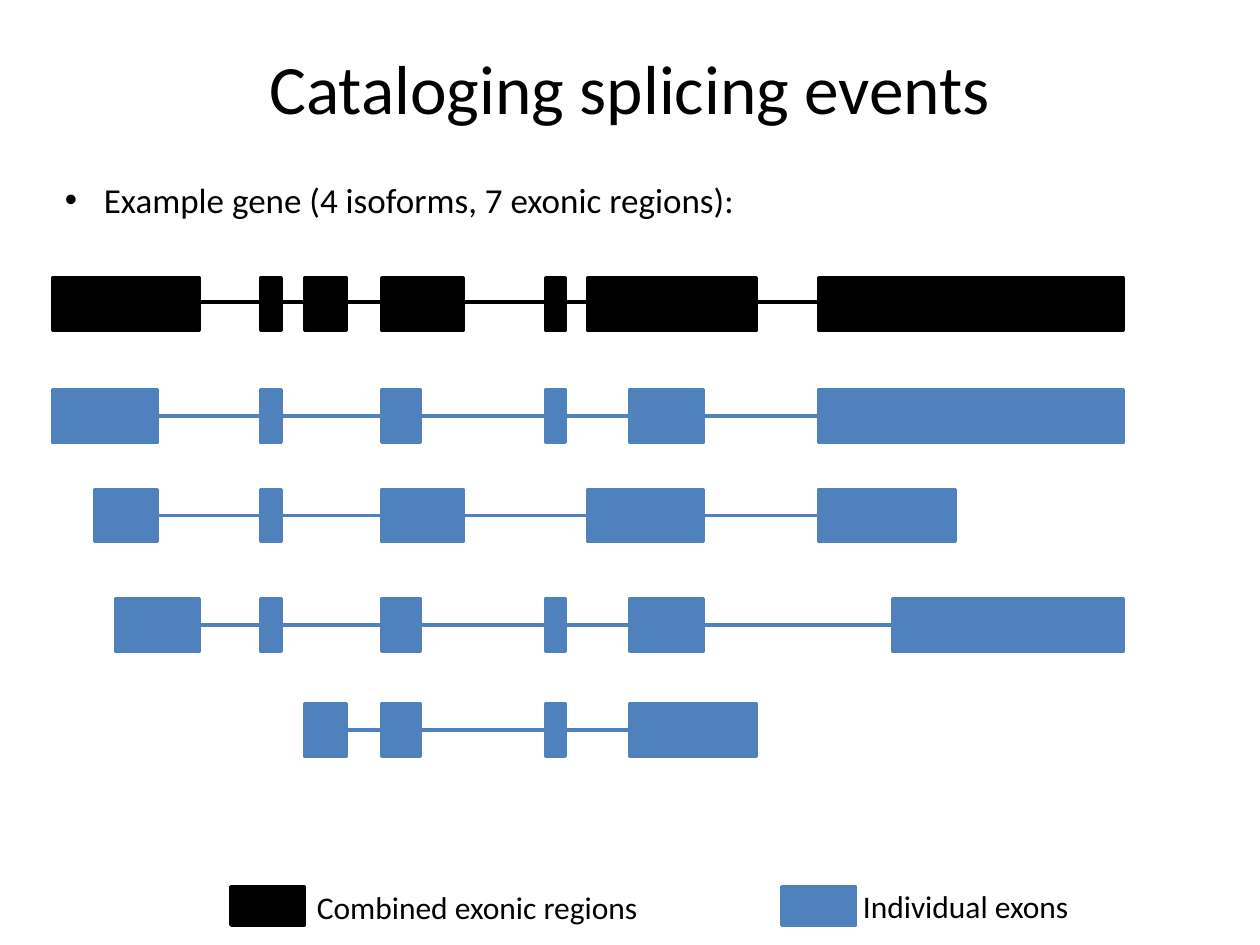
from lxml import etree
from pptx import Presentation
from pptx.dml.color import RGBColor
from pptx.enum import shapes, text
from pptx.oxml.ns import qn
from pptx.util import Inches, Pt

COLORS = {"combined": "000000", "individual": "4F81BD", "text": "000000"}
COLS, ROWS = 120, 90  # grid over the whole slide

prs = Presentation()
prs.slide_width, prs.slide_height = Inches(10), Inches(7.5)
col, row = prs.slide_width / COLS, prs.slide_height / ROWS
s = prs.slides.add_slide(prs.slide_layouts[6])


def add_text(content, x, y, w, h, size=18, align=text.PP_ALIGN.LEFT,
             anchor=text.MSO_ANCHOR.TOP, wrap=True, bullet=None):
    tb = s.shapes.add_textbox(int(x * col), int(y * row), int(w * col), int(h * row))
    tf = tb.text_frame
    tf.word_wrap, tf.vertical_anchor = wrap, anchor
    p = tf.paragraphs[0]
    p.alignment = align
    r = p.add_run()
    r.text = content
    r.font.size, r.font.name = Pt(size), "Calibri"
    r.font.color.rgb = RGBColor.from_string(COLORS["text"])
    if bullet:
        pPr = p._p.get_or_add_pPr()
        indent = Inches(0.31)
        pPr.set("marL", str(indent))
        pPr.set("indent", str(-indent))
        etree.SubElement(pPr, qn("a:buFont")).set("typeface", "Arial")
        etree.SubElement(pPr, qn("a:buChar")).set("char", bullet)


def add_box(x, y, w, h, kind):
    sp = s.shapes.add_shape(shapes.MSO_SHAPE.RECTANGLE,
                            int(x * col), int(y * row), int(w * col), int(h * row))
    sp.shadow.inherit = False
    color = RGBColor.from_string(COLORS[kind])
    sp.fill.solid()
    sp.fill.fore_color.rgb = color
    sp.line.color.rgb = color
    sp.line.width = Pt(2)
    return sp


add_text("Cataloging splicing events", 6, 3.6, 108, 9.4, size=39.6,
         align=text.PP_ALIGN.CENTER, anchor=text.MSO_ANCHOR.MIDDLE)
add_text("Example gene (4 isoforms, 7 exonic regions):", 5, 16.4, 83, 5.3,
         size=20, bullet="•")

# Each track: kind, top row, intron row, introns (start, end), exons (start, width)
EXON_H = 5
SPAN, INNER = (13, 86), (29, 70)
tracks = [
    ("combined", 26.5, 28.8, [SPAN, INNER],
     [(5, 14), (24.8, 2), (29, 4), (36.4, 7.7), (52, 1.8), (56, 16), (78, 29)]),
    ("individual", 37.1, 39.6, [SPAN],
     [(5, 10), (24.8, 2), (36.4, 3.6), (52, 1.8), (60, 7), (78, 29)]),
    ("individual", 46.6, 49.1, [SPAN],
     [(9, 6), (24.8, 2), (36.4, 7.7), (56, 11), (78, 13)]),
    ("individual", 57, 59.5, [SPAN],
     [(11, 8), (24.8, 2), (36.4, 3.6), (52, 1.8), (60, 7), (85, 22)]),
    ("individual", 67, 69.5, [INNER],
     [(29, 4), (36.4, 3.6), (52, 1.8), (60, 12)]),
]
for kind, top, mid, introns, exons in tracks:
    boxes = {x: add_box(x, top, w, EXON_H, kind) for x, w in exons}
    for start, end in introns:
        line = s.shapes.add_connector(shapes.MSO_CONNECTOR.STRAIGHT,
                                      int(start * col), int(mid * row),
                                      int(end * col), int(mid * row))
        line.line.color.rgb = RGBColor.from_string(COLORS[kind])
        line.line.width = Pt(2.25)
        etree.SubElement(line._element.spPr, qn("a:effectLst"))
        if start in boxes and mid == top + EXON_H / 2:
            line.begin_connect(boxes[start], 1)

# Legend: kind, label, box column, label column, label row, label width
legend = [
    ("combined", "Combined exonic regions", 22, 29, 84, 33.4),
    ("individual", "Individual exons", 74.5, 81, 83.9, 22.2),
]
for kind, label, box_x, label_x, label_y, label_w in legend:
    add_box(box_x, 84.5, 7, 3.6, kind)
    add_text(label, label_x, label_y, label_w, 4.8, wrap=False)

prs.save("out.pptx")
